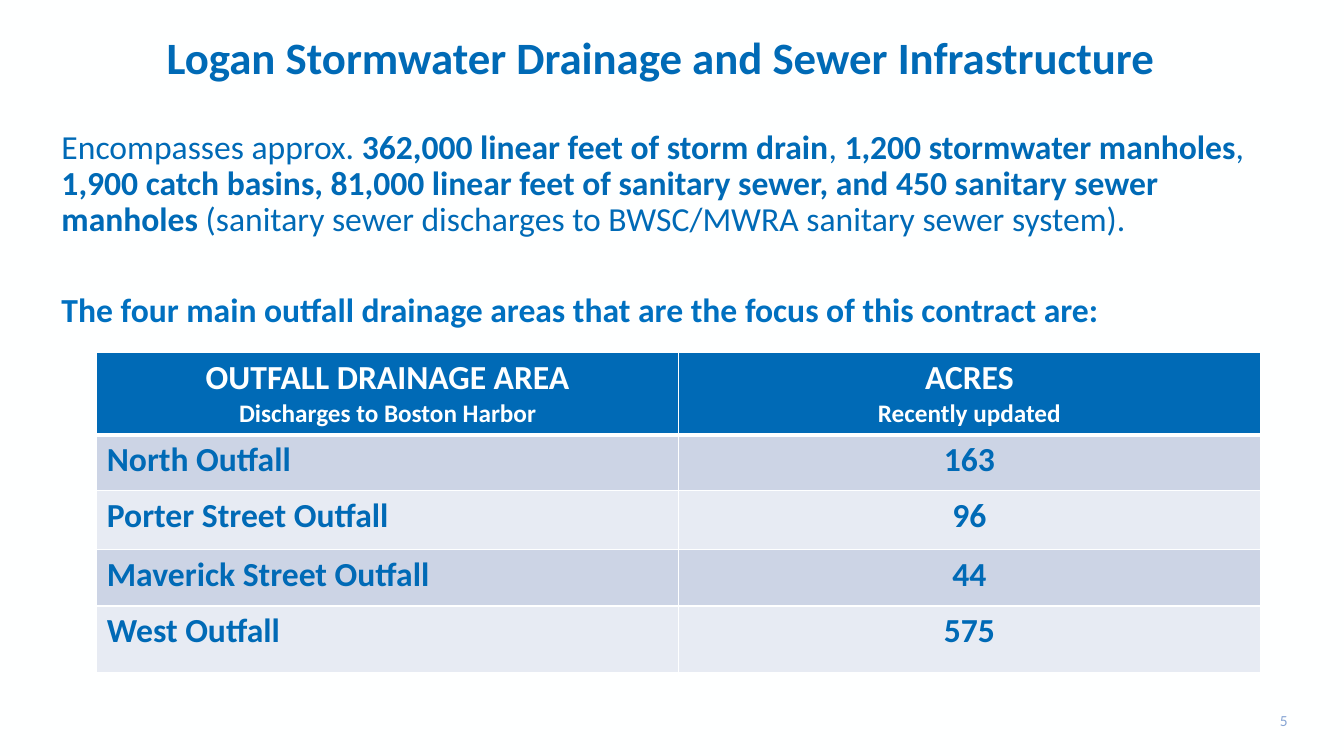
from lxml.etree import SubElement
from pptx import Presentation
from pptx.dml.color import RGBColor
from pptx.enum.text import MSO_ANCHOR as Anchor, MSO_AUTO_SIZE as AutoSize, PP_ALIGN as Align
from pptx.oxml.ns import qn
from pptx.util import Inches, Pt

BLUE, BRIGHT_BLUE, PALE_BLUE, WHITE = "006AB6", "0070C0", "87A5D4", "FEFFFF"
BANDS = ["CCD4E5", "E7EBF3"]

TITLE = "Logan Stormwater Drainage and Sewer Infrastructure"
SUMMARY = [
    ("Encompasses approx. ", False),
    ("362,000 linear feet of storm drain", True),
    (", ", False),
    ("1,200 stormwater manholes", True),
    (", ", False),
    ("1,900 catch basins, 81,000 linear feet of sanitary sewer, and 450 sanitary sewer manholes", True),
    (" (sanitary sewer discharges to BWSC/MWRA sanitary sewer system).", False),
]
LEAD_IN = "The four main outfall drainage areas that are the focus of this contract are:"
HEADINGS = [
    ("OUTFALL DRAINAGE AREA", "Discharges to Boston Harbor"),
    ("ACRES", "Recently updated"),
]
OUTFALLS = [
    ("North Outfall", "163"),
    ("Porter Street Outfall", "96"),
    ("Maverick Street Outfall", "44"),
    ("West Outfall", "575"),
]
PAGE = "5"
ROW_HEIGHTS = [0.79, 0.55, 0.59, 0.56, 0.66]
COLUMN_WIDTH = 5.77


def rgb(value):
    return RGBColor.from_string(value)


def write(paragraph, text, size=24, color=BLUE, bold=False, align=None, spacing=None, before=None):
    if align is not None:
        paragraph.alignment = align
    if spacing is not None:
        paragraph.line_spacing = spacing
    if before is not None:
        paragraph.space_before = Pt(before)
    run = paragraph.add_run()
    run.text = text
    run.font.name = "Calibri"
    run.font.size = Pt(size)
    run.font.bold = bold
    run.font.color.rgb = rgb(color)


def prepare(frame, inset=0, anchor=Anchor.TOP):
    frame.word_wrap = True
    frame.auto_size = AutoSize.NONE
    frame.vertical_anchor = anchor
    frame.margin_left = frame.margin_right = Inches(inset)
    frame.margin_top = frame.margin_bottom = Inches(inset / 2)
    return frame


def dress(cell, fill, bottom=1):
    properties = cell._tc.get_or_add_tcPr()
    for side, width in (("L", 1), ("R", 1), ("T", 1), ("B", bottom)):
        border = SubElement(properties, qn(f"a:ln{side}"), w=str(Pt(width)))
        solid = SubElement(border, qn("a:solidFill"))
        SubElement(solid, qn("a:srgbClr"), val=WHITE)
    cell.fill.solid()
    cell.fill.fore_color.rgb = rgb(fill)


deck = Presentation()
deck.slide_width, deck.slide_height = Inches(13.33), Inches(7.5)
slide = deck.slides.add_slide(deck.slide_layouts[5])
slide.background.fill.solid()
slide.background.fill.fore_color.rgb = rgb(WHITE)

title = slide.shapes.title
title.left, title.top, title.width, title.height = map(Inches, (0.61, 0.24, 11.89, 0.69))
heading = prepare(title.text_frame, anchor=Anchor.MIDDLE)
write(heading.paragraphs[0], TITLE, size=32, bold=True, align=Align.CENTER, spacing=0.95)

body = slide.shapes.add_textbox(*map(Inches, (0.61, 1.29, 12.11, 1.5)))
intro = prepare(body.text_frame)
for phrase, strong in SUMMARY:
    write(intro.paragraphs[0], phrase, bold=strong, spacing=0.9)
write(intro.add_paragraph(), LEAD_IN, color=BRIGHT_BLUE, bold=True, spacing=0.9, before=39)

acreage = slide.shapes.add_table(
    len(OUTFALLS) + 1, len(HEADINGS), Inches(0.96), Inches(3.5),
    Inches(COLUMN_WIDTH * len(HEADINGS)), Inches(sum(ROW_HEIGHTS))).table
for column in acreage.columns:
    column.width = Inches(COLUMN_WIDTH)
for row, height in zip(acreage.rows, ROW_HEIGHTS):
    row.height = Inches(height)

for c, (label, detail) in enumerate(HEADINGS):
    cell = acreage.cell(0, c)
    dress(cell, BLUE, bottom=3)
    write(cell.text_frame.paragraphs[0], label, color=WHITE, bold=True, align=Align.CENTER)
    write(cell.text_frame.add_paragraph(), detail, size=18, color=WHITE, bold=True, align=Align.CENTER)

for r, outfall in enumerate(OUTFALLS):
    for c, (entry, align) in enumerate(zip(outfall, (Align.LEFT, Align.CENTER))):
        cell = acreage.cell(r + 1, c)
        dress(cell, BANDS[r % 2])
        write(cell.text_frame.paragraphs[0], entry, bold=True, align=align)

corner = slide.shapes.add_textbox(*map(Inches, (9.87, 6.95, 3, 0.4)))
footer = prepare(corner.text_frame, inset=0.1, anchor=Anchor.MIDDLE)
write(footer.paragraphs[0], PAGE, size=11, color=PALE_BLUE, align=Align.RIGHT)

deck.save("out.pptx")
